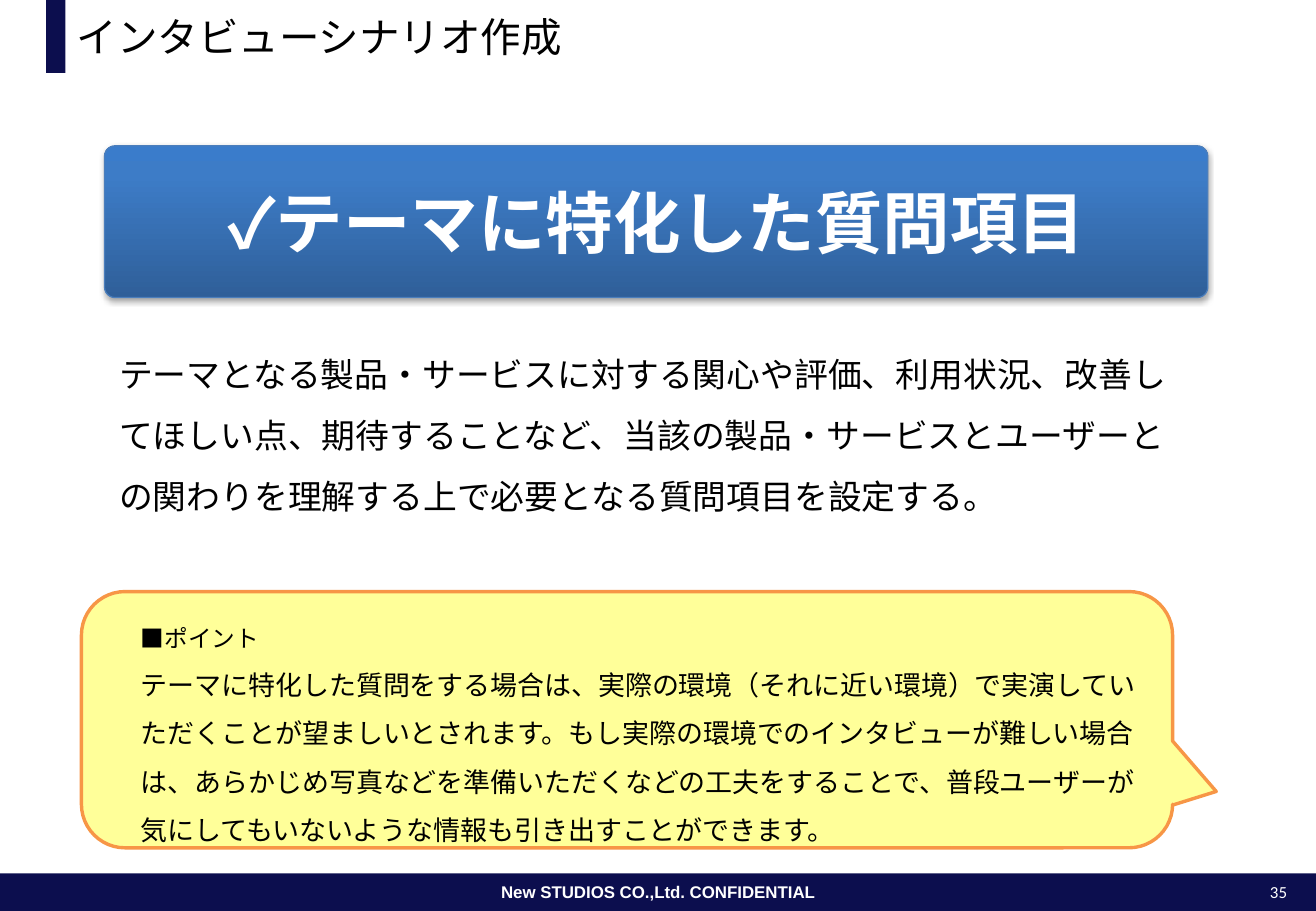
from lxml import etree
from pptx import Presentation
from pptx import util as u
from pptx.dml.color import RGBColor
from pptx.enum import shapes, text
from pptx.oxml import parse_xml
from pptx.oxml.ns import nsdecls, qn

NAVY = RGBColor(0x0C, 0x0E, 0x4E)
WHITE = RGBColor(0xFF, 0xFF, 0xFF)
BLACK = RGBColor(0, 0, 0)
BANNER_EDGE = RGBColor(0x4B, 0x7E, 0xBC)
YELLOW = RGBColor(0xFF, 0xFF, 0x99)
ORANGE = RGBColor(0xF7, 0x96, 0x46)
BANNER_STOPS = [(0, "2F5F99"), (80, "3D7CC7"), (100, "3A7CCB")]
JAPANESE = "Noto Sans CJK JP"
LEFT, CENTER, RIGHT = text.PP_ALIGN.LEFT, text.PP_ALIGN.CENTER, text.PP_ALIGN.RIGHT
TOP, MIDDLE = text.MSO_ANCHOR.TOP, text.MSO_ANCHOR.MIDDLE

WIDTH, HEIGHT = 10.83, 7.5
HEADER = 0.6
FOOTER = 0.31
MARGIN = 0.86
CONTENT = WIDTH - 2 * MARGIN + 0.03 * -1


def add_box(parent, preset, box, color=None):
    """Add a preset shape, or a text box when preset is None; box is in inches."""
    place = [u.Inches(value) for value in box]
    if preset is None:
        return parent.add_textbox(*place)
    shape = parent.add_shape(preset, *place)
    shape.shadow.inherit = False
    shape.line.fill.background()
    if color is not None:
        shape.fill.solid()
        shape.fill.fore_color.rgb = color
    return shape


def write(shape, lines, color, align=LEFT, anchor=TOP, font=JAPANESE,
          bold=False, spacing=None, insets=(0.1, 0.05), wrap=True):
    """Fill a shape with (wording, point size) paragraphs."""
    frame = shape.text_frame
    frame.auto_size = text.MSO_AUTO_SIZE.NONE
    frame.word_wrap = wrap
    frame.vertical_anchor = anchor
    frame.margin_left = frame.margin_right = u.Inches(insets[0])
    frame.margin_top = frame.margin_bottom = u.Inches(insets[1])
    frame.text = "\n".join(wording for wording, size in lines)
    for paragraph, (wording, size) in zip(frame.paragraphs, lines):
        paragraph.alignment = align
        paragraph.line_spacing = spacing
        paragraph.font.size = u.Pt(size)
        paragraph.font.bold = bold
        paragraph.font.color.rgb = color
        paragraph.font.name = font
        latin = next(paragraph._p.iter(qn("a:latin")))
        east_asian = etree.Element(qn("a:ea"), typeface=font)
        latin.addnext(east_asian)


presentation = Presentation()
presentation.slide_width = u.Inches(WIDTH)
presentation.slide_height = u.Inches(HEIGHT)
slide = presentation.slides.add_slide(presentation.slide_layouts[5])
preset = shapes.MSO_SHAPE

# Header and footer
title = slide.shapes.title
title.left, title.top = u.Inches(0.53), 0
title.width, title.height = u.Inches(10.16), u.Inches(HEADER)
write(title, [("インタビューシナリオ作成", 24)], BLACK, anchor=MIDDLE)
add_box(slide.shapes, preset.RECTANGLE, (0.38, 0, 0.16, HEADER), NAVY)

footer = add_box(slide.shapes, preset.RECTANGLE,
                 (0, HEIGHT - FOOTER, WIDTH, FOOTER), NAVY)
write(footer, [("New STUDIOS CO.,Ltd. CONFIDENTIAL", 10)], WHITE, CENTER, MIDDLE,
      font="Arial", bold=True, wrap=False)
page_number = add_box(slide.shapes, None, (10.28, 7.21, 0.41, 0.27))
write(page_number, [("35", 10)], WHITE, RIGHT, font="Calibri")

# Theme banner
banner = add_box(slide.shapes, preset.ROUNDED_RECTANGLE, (MARGIN, 1.2, CONTENT, 1.25))
banner.adjustments[0] = 0.07
banner.fill.gradient()
banner.fill.gradient_angle = 90
stops = next(banner._element.spPr.iter(qn("a:gsLst")))
stops.clear()
for percent, color in BANNER_STOPS:
    stop = etree.SubElement(stops, qn("a:gs"), pos=str(percent * 1000))
    etree.SubElement(stop, qn("a:srgbClr"), val=color)
banner.line.color.rgb = BANNER_EDGE
banner.line.width = u.Pt(0.75)
banner._element.spPr.find(qn("a:effectLst")).append(parse_xml(
    f'<a:outerShdw {nsdecls("a")} blurRad="{u.Pt(3.1)}" dist="{u.Pt(1.8)}" '
    'dir="5400000" rotWithShape="0"><a:srgbClr val="000000">'
    '<a:alpha val="35000"/></a:srgbClr></a:outerShdw>'))
write(banner, [("✓テーマに特化した質問項目", 40)], WHITE, CENTER, MIDDLE, bold=True)

description = add_box(slide.shapes, None, (MARGIN, 2.67, CONTENT, 1.67))
write(description, [(
    "テーマとなる製品・サービスに対する関心や評価、利用状況、改善してほしい点、"
    "期待することなど、当該の製品・サービスとユーザーとの関わりを理解する上で"
    "必要となる質問項目を設定する。", 20)], BLACK, spacing=1.5, insets=(0.12, 0.08))

# Point callout
point = slide.shapes.add_group_shape()
callout = add_box(point.shapes, preset.ROUNDED_RECTANGULAR_CALLOUT,
                  (0.67, 4.87, 8.98, 2.11), YELLOW)
for index, value in enumerate((0.54, 0.28, 0.17)):
    callout.adjustments[index] = value
callout.line.color.rgb = ORANGE
callout.line.width = u.Pt(2)

advice = add_box(point.shapes, None, (1.04, 4.94, 8.61, 2.13))
write(advice, [
    ("■ポイント", 14),
    ("テーマに特化した質問をする場合は、実際の環境（それに近い環境）で実演して"
     "いただくことが望ましいとされます。もし実際の環境でのインタビューが難しい場合は、"
     "あらかじめ写真などを準備いただくなどの工夫をすることで、普段ユーザーが"
     "気にしてもいないような情報も引き出すことができます。", 16),
], BLACK, spacing=1.5, insets=(0.12, 0.08))

presentation.save("out.pptx")
